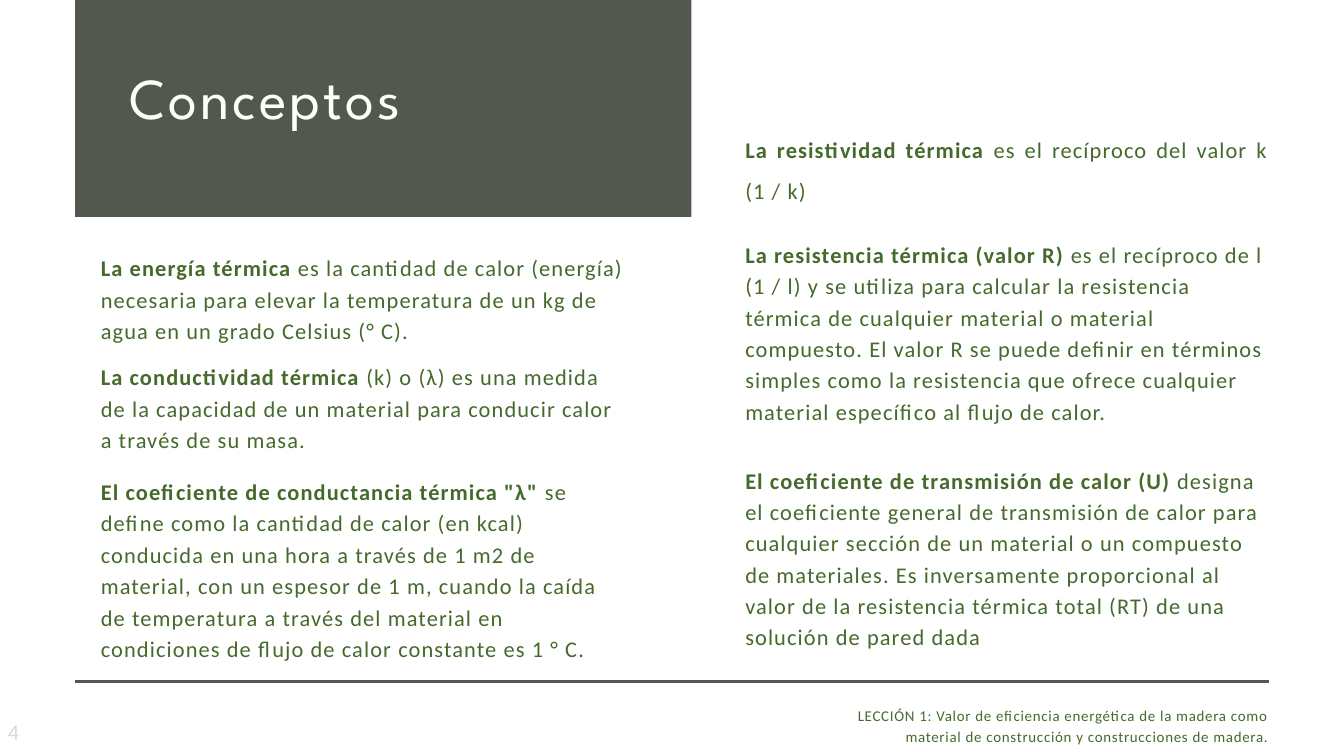
from pptx import Presentation
from pptx.dml.color import RGBColor
from pptx.enum.shapes import MSO_SHAPE
from pptx.enum.text import MSO_ANCHOR, MSO_AUTO_SIZE, PP_ALIGN
from pptx.util import Inches, Pt

SLATE = RGBColor(0x52, 0x58, 0x4D)
IVORY = RGBColor(0xFE, 0xFF, 0xF8)
GREEN = RGBColor(0x45, 0x6A, 0x2C)
PALE_GRAY = RGBColor(0xD9, 0xD9, 0xD9)

COLUMNS, ROWS = 160, 90
LEFT_COLUMN, RIGHT_COLUMN, CONCEPT_WIDTH = 12, 88.72, 62.24
MARGIN = 8.96

# Each concept: column, row, height, term, definition
CONCEPTS = [
    (LEFT_COLUMN, 29.76, 11.2, "La energía térmica ",
     "es la cantidad de calor (energía) necesaria para elevar la temperatura "
     "de un kg de agua en un grado Celsius (° C)."),
    (LEFT_COLUMN, 42.72, 11.2, "La conductividad térmica ",
     "(k) o (λ) es una medida de la capacidad de un material para conducir "
     "calor a través de su masa."),
    (LEFT_COLUMN, 56.4, 22.64, 'El coeficiente de conductancia térmica "λ"',
     " se define como la cantidad de calor (en kcal) conducida en una hora a "
     "través de 1 m2 de material, con un espesor de 1 m, cuando la caída de "
     "temperatura a través del material en condiciones de flujo de calor "
     "constante es 1 ° C."),
    (RIGHT_COLUMN, 28.16, 26.4, "La resistencia térmica (valor R) ",
     "es el recíproco de l (1 / l) y se utiliza para calcular la resistencia "
     "térmica de cualquier material o material compuesto. El valor R se puede "
     "definir en términos simples como la resistencia que ofrece cualquier "
     "material específico al flujo de calor."),
    (RIGHT_COLUMN, 55.04, 22.64, "El coeficiente de transmisión de calor (U) ",
     "designa el coeficiente general de transmisión de calor para cualquier "
     "sección de un material o un compuesto de materiales. Es inversamente "
     "proporcional al valor de la resistencia térmica total (RT) de una "
     "solución de pared dada"),
]


class ConceptSlide:
    body_font = "Calibri"
    title_font = "League Spartan"

    def __init__(self, presentation):
        self.slide = presentation.slides.add_slide(presentation.slide_layouts[6])
        self.cell_width = presentation.slide_width / COLUMNS
        self.cell_height = presentation.slide_height / ROWS

    def place(self, column, row, width, height):
        """Turn grid cells into slide lengths."""
        return (round(column * self.cell_width), round(row * self.cell_height),
                round(width * self.cell_width), round(height * self.cell_height))

    def rectangle(self, *cells, outlined=False):
        shape = self.slide.shapes.add_shape(MSO_SHAPE.RECTANGLE, *self.place(*cells))
        shape.shadow.inherit = False
        shape.fill.solid()
        shape.fill.fore_color.rgb = SLATE
        if outlined:
            shape.line.color.rgb = SLATE
            shape.line.width = Pt(0.75)
        else:
            shape.line.fill.background()
        return shape

    def text(self, *cells):
        """Add a text box without insets that grows with its text."""
        box = self.slide.shapes.add_textbox(*self.place(*cells))
        self.fit_frame(box.text_frame)
        return box.text_frame

    def fit_frame(self, frame):
        frame.word_wrap = True
        frame.auto_size = MSO_AUTO_SIZE.SHAPE_TO_FIT_TEXT
        frame.vertical_anchor = MSO_ANCHOR.TOP
        frame.margin_left = frame.margin_right = 0
        frame.margin_top = frame.margin_bottom = 0

    def run(self, paragraph, text, size=24, color=GREEN, bold=False,
            font=body_font, tracking=0.05):
        """Add a run; tracking is letter spacing as a share of the size."""
        run = paragraph.add_run()
        run.text = text
        run.font.size = Pt(size)
        run.font.name = font
        run.font.bold = bold
        run.font.color.rgb = color
        run.font._element.set("spc", str(round(size * tracking * 100)))

    def title(self, text, *cells):
        frame = self.rectangle(*cells).text_frame
        self.fit_frame(frame)
        paragraph = frame.paragraphs[0]
        paragraph.alignment = PP_ALIGN.LEFT
        paragraph.line_spacing = Pt(83.7)
        self.run(paragraph, text, 62, IVORY, font=self.title_font)

    def concept(self, column, row, height, term, definition):
        paragraph = self.text(column, row, CONCEPT_WIDTH, height).paragraphs[0]
        paragraph.line_spacing = Pt(33.6)
        self.run(paragraph, term, bold=True)
        self.run(paragraph, definition)
        return paragraph

    def page_number(self, number, *cells):
        box = self.slide.shapes.add_textbox(*self.place(*cells))
        frame = box.text_frame
        frame.word_wrap = True
        frame.vertical_anchor = MSO_ANCHOR.MIDDLE
        self.run(frame.paragraphs[0], number, color=PALE_GRAY)

    def footer(self, text, *cells):
        paragraph = self.text(*cells).paragraphs[0]
        paragraph.alignment = PP_ALIGN.RIGHT
        paragraph.line_spacing = Pt(22.4)
        self.run(paragraph, text, 16)


def main():
    presentation = Presentation()
    presentation.slide_width = Inches(20)
    presentation.slide_height = Inches(11.25)
    page = ConceptSlide(presentation)

    page.rectangle(MARGIN, -2.72, 73.36, 28.56)
    page.title("Conceptos", 15.44, 6.32, 60.48, 9.12)

    resistivity = page.concept(RIGHT_COLUMN, 14.64, 9.12, "La resistividad térmica ",
                               "es el recíproco del valor k (1 / k)")
    resistivity.alignment = PP_ALIGN.JUSTIFY
    resistivity.line_spacing = 1.5
    resistivity.space_after = Pt(6)
    for concept in CONCEPTS:
        page.concept(*concept)

    page.rectangle(MARGIN, 80.96, 142, 0.32, outlined=True)
    page.page_number("4", 0.16, 85.52, 18.64, 3.2)
    page.footer("LECCIÓN 1: Valor de eficiencia energética de la madera como "
                "material de construcción y construcciones de madera.",
                96, 83.76, 55.04, 4.8)
    presentation.save("out.pptx")


if __name__ == "__main__":
    main()
